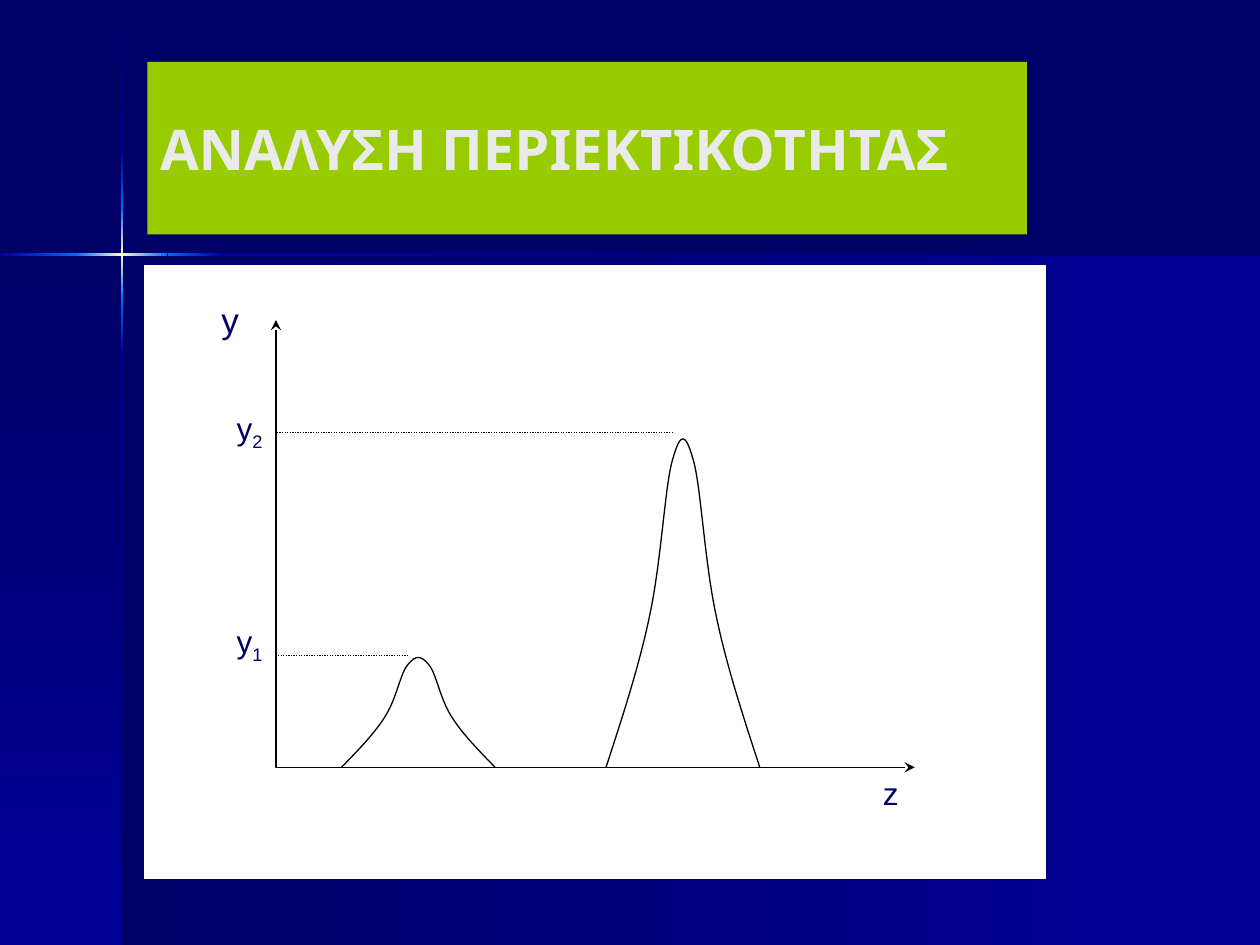
"""Build the content analysis slide with its two-peak diagram."""
from lxml import etree
from pptx import Presentation
from pptx import util as u
from pptx.dml.color import RGBColor
from pptx.enum import dml, shapes, text
from pptx.oxml.ns import qn

COLOURS = {"navy": "000066", "blue": "000099", "bright": "0066FF", "glow": "FFFFCC",
           "green": "99CC00", "pale": "EAEAEA", "white": "FFFFFF", "black": "000000"}
FADE_OUT, FADE_IN = ("navy", "blue"), ("blue", "navy")
RISE, FALL = ("blue", "bright"), ("bright", "blue")
SHINE = ("bright", "glow", "bright")
BANDS = [
    (0.97, 2.02, 9.03, 5.48, FADE_OUT, 0), (0, 2.02, 0.97, 5.48, FADE_OUT, 90),
    (0.96, 0.01, 0.02, 1.2, FADE_OUT, 90), (0.96, 2.82, 0.02, 4.68, FADE_IN, 90),
    (1.77, 2.01, 8.23, 0.02, FADE_IN, 0), (0.96, 2.38, 0.02, 0.44, FALL, 90),
    (0.96, 1.21, 0.02, 0.44, RISE, 90), (0.96, 1.65, 0.02, 0.73, SHINE, 90),
    (0, 2.01, 0.61, 0.02, RISE, 0), (1.33, 2.01, 0.44, 0.02, FALL, 0),
    (0.6, 2.01, 0.73, 0.02, SHINE, 0),
]
LABELS = [("y", "1", 1.78, 4.89, 18), ("y", "2", 1.78, 3.2, 18),
          ("y", "", 1.66, 2.32, 20), ("z", "", 6.91, 6.09, 18)]
ORIGIN_X, BASELINE = 2.19, 6.09
PEAK_WIDTH = 1.22
PEAKS = [(2.71, 0.89), (4.81, 2.66)]
HALF_PEAK = [(0, 0), (0.13, 0.15), (0.27, 0.31), (0.35, 0.46),
             (0.44, 0.62), (0.47, 0.85), (0.53, 0.92), (0.59, 1)]
PEAK = HALF_PEAK + [(PEAK_WIDTH - x, y) for x, y in reversed(HALF_PEAK)]


def rgb(name):
    """Return the named colour."""
    return RGBColor.from_string(COLOURS[name])


class Diagram:
    """Holds the style and the current slide."""

    def __init__(self, slide):
        self.slide = slide
        self.font = "Arial"
        self.title_font = "Karla"
        self.line_width = u.Pt(0.75)

    def stroke(self, shape, colour="black"):
        """Give a shape the standard thin line."""
        shape.line.color.rgb = rgb(colour)
        shape.line.width = self.line_width

    def background(self, colour):
        """Fill the slide background."""
        fill = self.slide.background.fill
        fill.solid()
        fill.fore_color.rgb = rgb(colour)

    def rectangle(self, left, top, width, height):
        """Add a plain rectangle."""
        shape = self.slide.shapes.add_shape(
            shapes.MSO_SHAPE.RECTANGLE, *map(u.Inches, (left, top, width, height)))
        shape.shadow.inherit = False
        return shape

    def band(self, left, top, width, height, colours, angle):
        """Add a gradient band with evenly spaced colour stops."""
        shape = self.rectangle(left, top, width, height)
        shape.line.fill.background()
        shape.fill.gradient()
        shape.fill.gradient_angle = -angle % 360
        stops = shape._element.spPr.find(".//" + qn("a:gsLst"))
        for stop in list(stops):
            stops.remove(stop)
        for index, colour in enumerate(colours):
            position = 100000 * index // (len(colours) - 1)
            stop = etree.SubElement(stops, qn("a:gs"), pos=str(position))
            etree.SubElement(stop, qn("a:srgbClr"), val=COLOURS[colour])

    def panel(self, left, top, width, height):
        """Add the white diagram panel."""
        shape = self.rectangle(left, top, width, height)
        shape.fill.solid()
        shape.fill.fore_color.rgb = rgb("white")
        self.stroke(shape, "navy")

    def title(self, wording, left, top, width, height):
        """Format the title placeholder and bring it in front of the bands."""
        shape = self.slide.shapes.title
        shape.left, shape.top, shape.width, shape.height = map(
            u.Inches, (left, top, width, height))
        shape.fill.solid()
        shape.fill.fore_color.rgb = rgb("green")
        frame = shape.text_frame
        frame.text = wording
        frame.vertical_anchor = text.MSO_ANCHOR.MIDDLE
        paragraph = frame.paragraphs[0]
        paragraph.alignment = text.PP_ALIGN.LEFT
        self.style(paragraph.font, self.title_font, 32, "pale")
        paragraph.font.bold = True
        self.slide.shapes._spTree.append(shape._element)

    def style(self, font, name, size, colour):
        """Set the face, size and colour of a font."""
        font.name = name
        font.size = u.Pt(size)
        font.color.rgb = rgb(colour)

    def label(self, letter, subscript, left, top, size):
        """Add an axis label with an optional subscript."""
        box = self.slide.shapes.add_textbox(*map(u.Inches, (left, top, 0.7, 0.67)))
        box.text_frame.word_wrap = True
        paragraph = box.text_frame.paragraphs[0]
        self.style(paragraph.font, self.font, size, "navy")
        paragraph.add_run().text = letter
        if subscript:
            run = paragraph.add_run()
            run.text = subscript
            run._r.get_or_add_rPr().set("baseline", "-25000")

    def outline(self, points):
        """Add an open, unfilled outline."""
        start, *rest = [(u.Inches(x), u.Inches(y)) for x, y in points]
        builder = self.slide.shapes.build_freeform(*start)
        builder.add_line_segments(rest, close=False)
        shape = builder.convert_to_shape()
        shape.shadow.inherit = False
        shape.fill.background()
        self.stroke(shape)
        return shape

    def axes(self, points):
        """Add the axes with an arrowhead at each end."""
        line = self.outline(points)._element.spPr.find(qn("a:ln"))
        for end in ("a:headEnd", "a:tailEnd"):
            etree.SubElement(line, qn(end), type="stealth")

    def curve(self, points):
        """Add a curve whose points after the first are cubic triples."""
        spPr = self.outline(points)._element.spPr
        segments = list(spPr.iter(qn("a:lnTo")))
        for first in range(0, len(segments), 3):
            cubic = etree.Element(qn("a:cubicBezTo"))
            segments[first].addprevious(cubic)
            for segment in segments[first:first + 3]:
                cubic.append(segment[0])
                segment.getparent().remove(segment)

    def dotted_line(self, start_x, end_x, y):
        """Add a dotted level line."""
        line = self.slide.shapes.add_connector(
            shapes.MSO_CONNECTOR.STRAIGHT, *map(u.Inches, (start_x, y, end_x, y)))
        self.stroke(line)
        line.line.dash_style = dml.MSO_LINE.ROUND_DOT
        etree.SubElement(line._element.spPr, qn("a:effectLst"))


def main():
    """Build and save the presentation."""
    presentation = Presentation()
    presentation.slide_width, presentation.slide_height = u.Inches(10), u.Inches(7.5)
    diagram = Diagram(presentation.slides.add_slide(presentation.slide_layouts[5]))
    diagram.background("navy")
    for band in BANDS:
        diagram.band(*band)
    diagram.title("ΑΝΑΛΥΣΗ ΠΕΡΙΕΚΤΙΚΟΤΗΤΑΣ", 1.17, 0.49, 6.98, 1.37)
    diagram.panel(1.14, 2.1, 7.17, 4.88)
    diagram.axes([(ORIGIN_X, 2.54), (ORIGIN_X, BASELINE), (7.26, BASELINE)])
    for left, height in PEAKS:
        diagram.curve([(left + x, BASELINE - y * height) for x, y in PEAK])
        diagram.dotted_line(left + 0.53, ORIGIN_X, BASELINE - height)
    for label in LABELS:
        diagram.label(*label)
    presentation.save("out.pptx")


if __name__ == "__main__":
    main()
